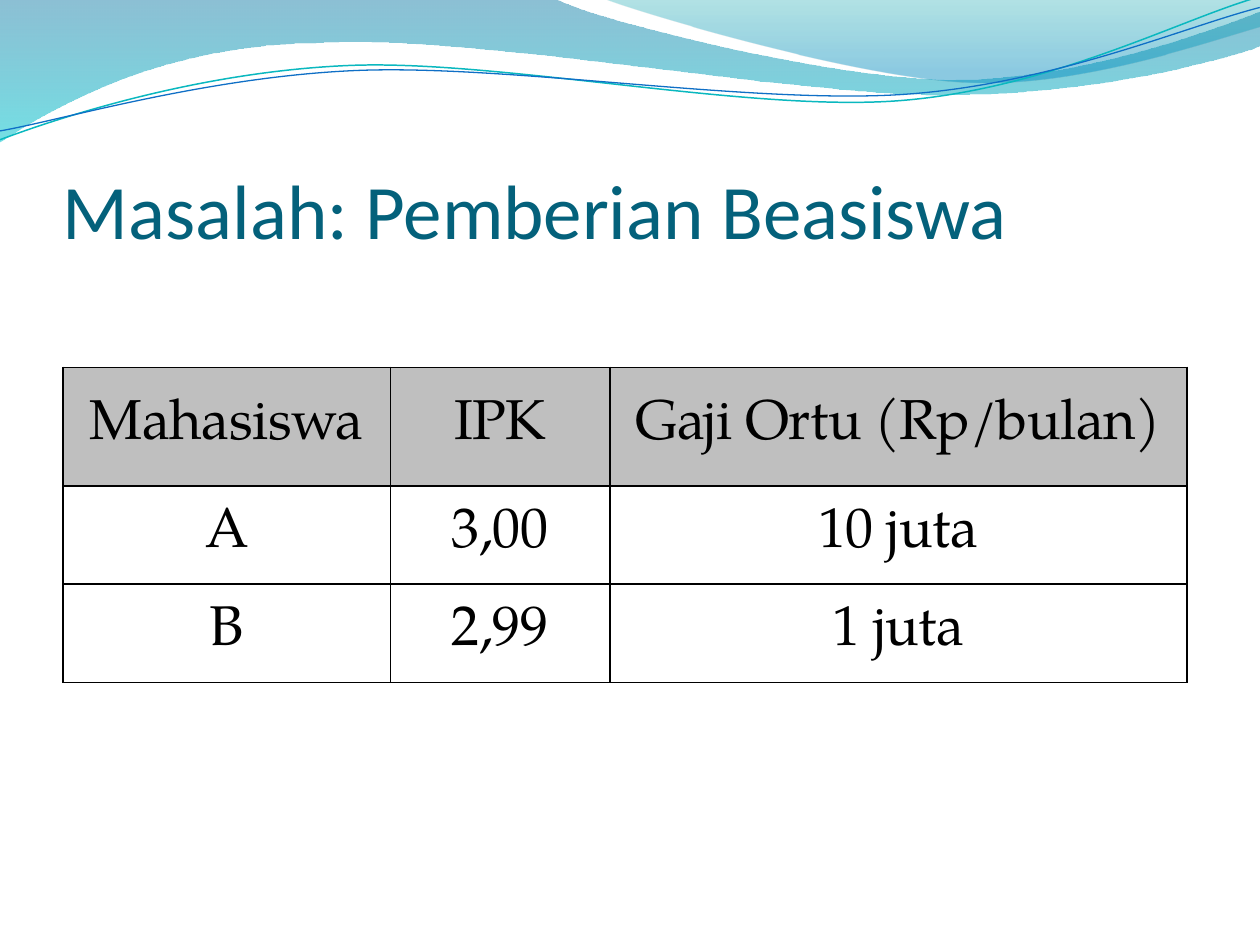
from dataclasses import dataclass
from itertools import islice
from math import cos, radians, sin

from lxml.etree import SubElement
from pptx import Presentation
from pptx.dml.color import RGBColor
from pptx.enum.text import MSO_ANCHOR, PP_ALIGN
from pptx.oxml.ns import qn
from pptx.util import Inches, Pt

COLORS = {
    "title": "04617B", "ink": "000000", "header": "BFBFBF",
    "deep": "0074A1", "aqua": "00C6CF", "teal": "00A1A9", "sky": "008BBF",
    "teal_line": "0AB8BF", "blue_line": "0F6FC6",
}


@dataclass
class GradientStop:
    position: float
    color: str
    opacity: int


@dataclass
class Wave:
    start: tuple
    segments: list
    stops: tuple = ()
    line_color: str = ""
    line_width: float = 0
    rotation: float = 0


WAVES = [
    Wave((0, -0.01), [
        (4.4, -0.01),
        (4.76, 0.17, 6.64, 0.63, 7.58, 0.63),
        (8.53, 0.63, 9.58, 0.26, 10, 0.09),
        (10.01, 0.36),
        (9.83, 0.44, 8.7, 0.76, 7.46, 0.75),
        (6.22, 0.75, 3.82, 0.28, 2.57, 0.34),
        (1.29, 0.35, 0.46, 0.83, -0.01, 1.13),
        (0, -0.01),
    ], stops=(GradientStop(0, "deep", 45), GradientStop(1, "aqua", 55))),
    Wave((4.79, -0.01), [
        (5.09, 0.11, 6.82, 0.62, 7.69, 0.65),
        (8.56, 0.69, 9.61, 0.32, 10, 0.21),
        (10, 0),
        (4.79, -0.01),
    ], stops=(GradientStop(0, "teal", 30), GradientStop(0.8, "sky", 45))),
    Wave((0, 1.11), [
        (0.48, 0.93, 1.58, 0.57, 2.77, 0.52),
        (3.95, 0.47, 5.93, 0.89, 7.13, 0.8),
        (8.33, 0.71, 9.38, 0.15, 9.98, -0.02),
    ], line_color="teal_line", line_width=0.85, rotation=-2.7),
    Wave((0, 1.04), [
        (0.47, 0.96, 1.64, 0.61, 2.83, 0.56),
        (4.03, 0.51, 5.97, 0.83, 7.17, 0.75),
        (8.36, 0.67, 9.41, 0.21, 10, 0.06),
    ], line_color="blue_line", line_width=0.75, rotation=-2.7),
]

COLUMN_WIDTHS = [2.6, 1.74, 4.58]
ROW_HEIGHTS = [0.94, 0.78, 0.78]
STUDENTS = [
    ("Mahasiswa", "IPK", "Gaji Ortu (Rp/bulan)"),
    ("A", "3,00", "10 juta"),
    ("B", "2,99", "1 juta"),
]


def rgb(name: str) -> RGBColor:
    return RGBColor.from_string(COLORS[name])


def rotate(points: list, degrees: float) -> list:
    center_x = (points[0][0] + points[-1][0]) / 2
    center_y = (points[0][1] + points[-1][1]) / 2
    cosine, sine = cos(radians(degrees)), sin(radians(degrees))
    return [(center_x + (x - center_x) * cosine - (y - center_y) * sine,
             center_y + (x - center_x) * sine + (y - center_y) * cosine)
            for x, y in points]


def bend_segments(ribbon, segments: list) -> None:
    lines = iter(list(ribbon._element.iter(qn("a:lnTo"))))
    for segment in segments:
        first, *others = islice(lines, len(segment) // 2)
        if others:
            curve = SubElement(first.getparent(), qn("a:cubicBezTo"))
            first.addprevious(curve)
            for line in (first, *others):
                curve.append(line[0])
                line.getparent().remove(line)


def draw_wave(slide, wave: Wave) -> None:
    points = [wave.start]
    for segment in wave.segments:
        points.extend(zip(segment[::2], segment[1::2]))
    if wave.rotation:
        points = rotate(points, -wave.rotation)
    outline = [(Inches(x), Inches(y)) for x, y in points]
    builder = slide.shapes.build_freeform(*outline[0])
    builder.add_line_segments(outline[1:], close=bool(wave.stops))
    ribbon = builder.convert_to_shape()
    bend_segments(ribbon, wave.segments)
    ribbon.shadow.inherit = False
    ribbon.rotation = wave.rotation
    if not wave.stops:
        ribbon.fill.background()
        ribbon.line.color.rgb = rgb(wave.line_color)
        ribbon.line.width = Pt(wave.line_width)
        return
    ribbon.line.fill.background()
    ribbon.fill.gradient()
    ribbon.fill.gradient_angle = 270
    for target, stop in zip(ribbon.fill.gradient_stops, wave.stops):
        target.position = stop.position
        target.color.rgb = rgb(stop.color)
    for color, stop in zip(ribbon.fill._xPr.iter(qn("a:srgbClr")), wave.stops):
        SubElement(color, qn("a:alpha"), val=str(stop.opacity * 1000))


def write(frame, text: str, *, font: str, size: float, color: str,
          align=PP_ALIGN.LEFT, before: float = 0, after: float = 0,
          spacing: float = 0) -> None:
    paragraph = frame.paragraphs[0]
    paragraph.alignment = align
    paragraph.space_before, paragraph.space_after = Pt(before), Pt(after)
    run = paragraph.add_run()
    run.text = text
    run.font.name, run.font.size = font, Pt(size)
    run.font.color.rgb = rgb(color)
    if spacing:
        run.font._element.set("spc", str(round(spacing * 100)))


def add_borders(cell) -> None:
    properties = cell._tc.get_or_add_tcPr()
    for side in ("lnL", "lnR", "lnT", "lnB"):
        border = SubElement(properties, qn(f"a:{side}"), w=str(Pt(1)))
        fill = SubElement(border, qn("a:solidFill"))
        SubElement(fill, qn("a:srgbClr"), val=COLORS["ink"])


def draw_title(slide) -> None:
    title = slide.shapes.add_textbox(Inches(0.5), Inches(0.77), Inches(9), Inches(1.25))
    frame = title.text_frame
    frame.word_wrap = True
    frame.vertical_anchor = MSO_ANCHOR.BOTTOM
    frame.margin_left = frame.margin_right = frame.margin_bottom = 0
    frame.margin_top = Inches(0.05)
    write(frame, "Masalah: Pemberian Beasiswa", font="Calibri", size=44, color="title")


def draw_students(slide) -> None:
    students = slide.shapes.add_table(
        len(ROW_HEIGHTS), len(COLUMN_WIDTHS), Inches(0.5), Inches(35 / 12),
        Inches(sum(COLUMN_WIDTHS)), Inches(sum(ROW_HEIGHTS))).table
    students.first_row = students.horz_banding = False
    for column, width in zip(students.columns, COLUMN_WIDTHS):
        column.width = Inches(width)
    for row, height, values in zip(students.rows, ROW_HEIGHTS, STUDENTS):
        row.height = Inches(height)
        for cell, value in zip(row.cells, values):
            cell.vertical_anchor = MSO_ANCHOR.MIDDLE
            cell.margin_left = cell.margin_right = Inches(0.07)
            cell.margin_top = cell.margin_bottom = 0
            add_borders(cell)
            if values is STUDENTS[0]:
                cell.fill.solid()
                cell.fill.fore_color.rgb = rgb("header")
            else:
                cell.fill.background()
            write(cell.text_frame, value, font="TeX Gyre Pagella", size=32, color="ink",
                  align=PP_ALIGN.CENTER, before=3, after=6, spacing=-0.3)


def main() -> None:
    presentation = Presentation()
    presentation.slide_width, presentation.slide_height = Inches(10), Inches(7.5)
    slide = presentation.slides.add_slide(presentation.slide_layouts[6])
    for wave in WAVES:
        draw_wave(slide, wave)
    draw_title(slide)
    draw_students(slide)
    presentation.save("out.pptx")


if __name__ == "__main__":
    main()
